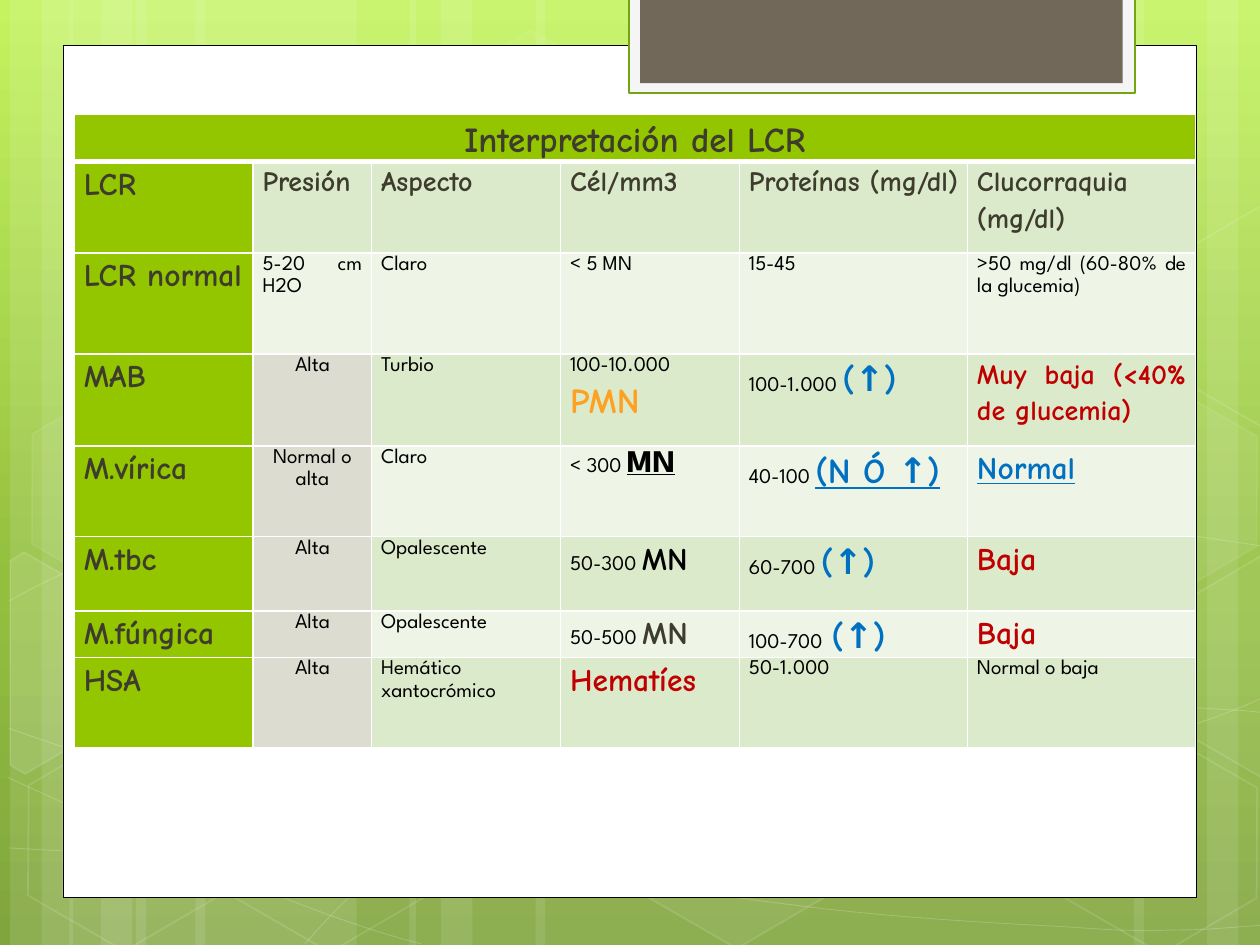
"""Build the slide on cerebrospinal fluid interpretation, with its leafy green backdrop."""
from math import cos, radians, sin

from lxml.etree import SubElement
from pptx import Presentation
from pptx.dml.color import RGBColor
from pptx.enum.shapes import MSO_SHAPE as Shape
from pptx.enum.text import PP_ALIGN as Align
from pptx.oxml.ns import qn
from pptx.util import Cm, Pt

COMIC, SPARTAN = "Comic Neue", "League Spartan"
THEME = {
    "white": "FFFFFF", "black": "000000", "label": "94C600", "bands": ("EEF5E7", "DCEACC"),
    "pressure": "DDDCD0", "frame": "F5F5F5", "frame_line": "74A510", "tab": "71685A",
    "sky": ((0, "C3F35F"), (62, "93BF3F"), (100, "81A53E")),
    "text": {
        "title": (COMIC, 20, "3E3D2D", True, False),
        "label": (COMIC, 18, "3E3D2D", True, False),
        "head": (COMIC, 16, "3E3D2D", True, False),
        "plain": (SPARTAN, 12, "000000", False, False),
        "gap": (SPARTAN, 20, "000000", False, False),
        "orange": (COMIC, 20, "FEA022", True, False),
        "blue": (COMIC, 20, "0070C0", True, False),
        "blue_line": (COMIC, 20, "0070C0", True, True),
        "normal": (COMIC, 18, "0070C0", True, True),
        "warning": (COMIC, 16, "C00000", True, False),
        "red": (COMIC, 18, "C00000", True, False),
        "black": (COMIC, 18, "000000", True, False),
        "black_line": (SPARTAN, 18, "000000", True, True),
    },
}

TITLE = "Interpretación del LCR"
HEADINGS = ("LCR", "Presión", "Aspecto", "Cél/mm3", "Proteínas (mg/dl)", "Clucorraquia (mg/dl)")
RISE = ("(↑)", "blue")
ROWS = (
    ("LCR normal", "5-20 cm H2O", "Claro", "< 5 MN", "15-45", ">50 mg/dl (60-80% de la glucemia)"),
    ("MAB", "Alta", "Turbio", ["100-10.000 ", ("PMN ", "orange")], ["100-1.000 ", RISE],
     [("Muy baja (<40% de glucemia)", "warning")]),
    ("M.vírica", "Normal o alta", "Claro", ["< 300 ", ("MN", "black_line")],
     ["40-100 ", ("(N Ó ↑)", "blue_line")], [("Normal", "normal")]),
    ("M.tbc", "Alta", "Opalescente", ["50-300 ", ("MN", "black")], ["60-700 ", RISE],
     [("Baja", "red")]),
    ("M.fúngica", "Alta", "Opalescente ", ["50-500 ", ("MN", "label")],
     ["100-700", (" ", "gap"), RISE], [("Baja", "red")]),
    ("HSA ", "Alta", "Hemático xantocrómico", [("Hematíes", "red")], "50-1.000", "Normal o baja"),
)
COLUMN_WIDTHS = (1.42, 0.94, 1.5, 1.42, 1.81, 1.81)
ROW_HEIGHTS = (0.37, 0.73, 0.8, 0.73, 0.72, 0.59, 0.36, 0.72)

STRIPES = ((1.08, 1.75), (0.08, 0.5), (0.33, 0.83), (1.55, 1.75), (0.55, 0.5), (0.8, 0.83),
           (7.33, 1.75), (9.58, 0.5), (9, 0.83), (4.25, 3.08), (3.25, 0.5), (3.5, 0.83))
CURVES = (
    ((0.07, 6.73), (0.61, 6.76), (1.15, 6.79), (1.9, 6.78), (2.65, 6.77), (3.58, 6.75),
     (4.58, 6.65), (5.58, 6.55), (7, 6.36), (7.92, 6.17), (8.83, 5.98), (9.77, 5.68), (10.07, 5.51)),
    ((0.07, 4.77), (0.36, 4.61), (0.65, 4.46), (1.21, 4.31), (1.78, 4.16), (2.59, 3.94),
     (3.47, 3.87), (4.36, 3.8), (5.44, 3.79), (6.54, 3.87), (7.64, 3.95), (9.47, 4.26), (10.07, 4.34)),
    ((0.06, 6.17), (1.27, 6.72), (2.47, 7.27), (3.34, 7.49)),
    ((0.07, 5.78), (0.38, 5.89), (0.7, 6), (1.28, 6.16), (1.86, 6.31), (2.73, 6.56), (3.57, 6.73),
     (4.4, 6.9), (5.45, 7.08), (6.28, 7.18), (7.11, 7.29), (8, 7.33), (8.53, 7.36),
     (9.05, 7.4), (9.19, 7.38), (9.45, 7.38), (9.71, 7.37), (9.89, 7.35), (10.07, 7.34)),
    ((2.42, 7.49), (2.6, 7.29), (2.78, 7.09), (3.02, 6.91), (3.26, 6.73), (3.6, 6.53),
     (3.88, 6.39), (4.16, 6.25), (4.33, 6.19), (4.7, 6.09), (5.06, 5.99), (5.73, 5.85),
     (6.08, 5.78), (6.44, 5.71), (6.49, 5.71), (6.8, 5.69), (7.11, 5.66), (7.6, 5.63),
     (7.94, 5.62), (8.29, 5.61), (8.86, 5.62), (8.86, 5.62), (9.08, 5.62), (9.31, 5.62),
     (9.53, 5.62), (9.71, 5.63), (9.88, 5.64), (9.97, 5.65), (10.06, 5.66), (10.03, 5.65), (10.06, 5.66)),
)
TILT = 30
HEXAGONS = ((3.34, 0.36, 4, 8), (4.97, 5.89, 6, 12), (0.11, 5.91, None, 12), (0.14, 3.12, 7, 8),
            (1.74, 5.92, None, 12), (7.53, 4.53, 10, 12), (8.34, 5.93, None, 12),
            (8.34, 3.14, 7, 8))
CUT_HEXAGONS = (
    (((0.08, 4.45), (0.19, 4.38), (0.96, 4.82), (0.95, 5.7), (0.2, 6.14), (0.08, 6.07)),
     (0.36, 5.35), 10),
    (((9.26, 4.85), (10.01, 4.41), (10.09, 4.46), (10.09, 6.13), (10.02, 6.17), (9.26, 5.73)),
     (9.85, 5.2), 4),
    (((9.26, 2.07), (10.01, 1.63), (10.1, 1.68), (10.09, 3.35), (10.02, 3.39), (9.26, 2.95)),
     (9.85, 2.41), None),
)
PANELS = (((0.5, 0.36, 9, 6.76), "white", "black", 0.5),
          ((4.99, -0.02, 4.02, 0.76), "frame", "frame_line", 1.25),
          ((5.08, -0.02, 3.83, 0.68), "tab", None, 0))


def length(inches):
    return Cm(inches * 2.54)


def paint(fill, color, opacity=100):
    if color is None:
        fill.background()
        return
    fill.solid()
    fill.fore_color.rgb = RGBColor.from_string(color)
    if opacity < 100:
        node = fill._xPr.find(qn("a:solidFill"))[0]
        SubElement(node, qn("a:alpha"), val=str(opacity * 1000))


def dress(shape, fill=None, opacity=100, line=None, width=0, line_opacity=100):
    shape.shadow.inherit = False
    paint(shape.fill, fill, opacity or 100)
    paint(shape.line.fill, line, line_opacity)
    if line:
        shape.line.width = Pt(width)


def add_outline(shapes, points, close):
    start, *rest = [(length(x), length(y)) for x, y in points]
    builder = shapes.build_freeform(*start, scale=1.0)
    builder.add_line_segments(rest, close=close)
    return builder.convert_to_shape()


def add_curve(shapes, points):
    curve = add_outline(shapes, points, False)
    lines = list(curve._element.iter(qn("a:lnTo")))
    outline = lines[0].getparent()
    for start in range(0, len(lines), 3):
        bend = SubElement(outline, qn("a:cubicBezTo"))
        for line in lines[start:start + 3]:
            bend.append(line[0])
            outline.remove(line)
    return curve


def add_cut_hexagon(shapes, corners, center):
    cosine, sine = cos(radians(TILT)), sin(radians(TILT))
    middle_x, middle_y = center
    level = [(middle_x + (x - middle_x) * cosine + (y - middle_y) * sine,
              middle_y - (x - middle_x) * sine + (y - middle_y) * cosine) for x, y in corners]
    hexagon = add_outline(shapes, level, True)
    hexagon.rotation = TILT
    return hexagon


def add_backdrop(slide):
    slide.background.fill.gradient()
    slide.background.fill.gradient_angle = 270
    stops = slide._element.find(".//" + qn("a:gsLst"))
    stops.clear()
    for position, color in THEME["sky"]:
        stop = SubElement(stops, qn("a:gs"), pos=str(position * 1000))
        SubElement(stop, qn("a:srgbClr"), val=color)

    shapes, white = slide.shapes, THEME["white"]
    for left, width in STRIPES:
        dress(shapes.add_shape(Shape.RECTANGLE, length(left), 0, length(width), length(7.5)), white, 10)
    for curve in CURVES:
        dress(add_curve(shapes, curve), line=white, width=0.5, line_opacity=20)
    for left, top, opacity, line_opacity in HEXAGONS:
        hexagon = shapes.add_shape(Shape.HEXAGON, *map(length, (left, top, 1.75, 1.52)))
        hexagon.adjustments[0] = 0.285
        hexagon.rotation = TILT
        dress(hexagon, white if opacity else None, opacity, white, 1, line_opacity)
    for corners, center, opacity in CUT_HEXAGONS:
        dress(add_cut_hexagon(shapes, corners, center), white if opacity else None, opacity, white, 1, 12)
    for place, fill, line, width in PANELS:
        dress(shapes.add_shape(Shape.RECTANGLE, *map(length, place)), THEME[fill],
              line=THEME.get(line), width=width)
    for shape in list(shapes):
        slide.slide_layout.shapes._spTree.append(shape._element)


def fill_cell(cell, content, style, color, align, bottom=1):
    cell.margin_left = cell.margin_right = Cm(0.19)
    cell.margin_top = cell.margin_bottom = 0
    properties = cell._tc.get_or_add_tcPr()
    for side, width in (("L", 1), ("R", 1), ("T", 1), ("B", bottom)):
        border = SubElement(properties, qn("a:ln" + side), w=str(Pt(width)))
        SubElement(SubElement(border, qn("a:solidFill")), qn("a:srgbClr"), val=THEME["white"])
    paint(cell.fill, color)
    para = cell.text_frame.paragraphs[0]
    para.alignment, para.line_spacing = align, 1.15
    for part in [content] if isinstance(content, str) else content:
        text, name = (part, style) if isinstance(part, str) else part
        span = para.add_run()
        span.text = text
        font = span.font
        font.name, size, ink, font.bold, font.underline = THEME["text"][name]
        font.size, font.color.rgb = Pt(size), RGBColor.from_string(ink)


def add_findings(slide):
    place = map(length, (0.59, 0.91, sum(COLUMN_WIDTHS), sum(ROW_HEIGHTS)))
    table = slide.shapes.add_table(len(ROW_HEIGHTS), len(COLUMN_WIDTHS), *place).table
    table.first_row = table.horz_banding = False
    for column, width in zip(table.columns, COLUMN_WIDTHS):
        column.width = length(width)
    for row, height in zip(table.rows, ROW_HEIGHTS):
        row.height = length(height)
    table.cell(0, 0).merge(table.cell(0, len(COLUMN_WIDTHS) - 1))
    for column in range(len(COLUMN_WIDTHS)):
        fill_cell(table.cell(0, column), [] if column else TITLE, "title", THEME["label"], Align.CENTER, 3)
    for r, contents in enumerate((HEADINGS, *ROWS), 1):
        for c, content in enumerate(contents):
            style = "label" if c == 0 else "head" if r == 1 else "plain"
            raised = c == 1 and r > 2
            color = THEME["label"] if c == 0 else THEME["pressure"] if raised else THEME["bands"][r % 2]
            fill_cell(table.cell(r, c), content, style, color, Align.CENTER if raised else Align.JUSTIFY)


def main():
    deck = Presentation()
    deck.slide_width, deck.slide_height = length(10), length(7.5)
    slide = deck.slides.add_slide(deck.slide_layouts[6])
    add_backdrop(slide)
    add_findings(slide)
    deck.save("out.pptx")


if __name__ == "__main__":
    main()
